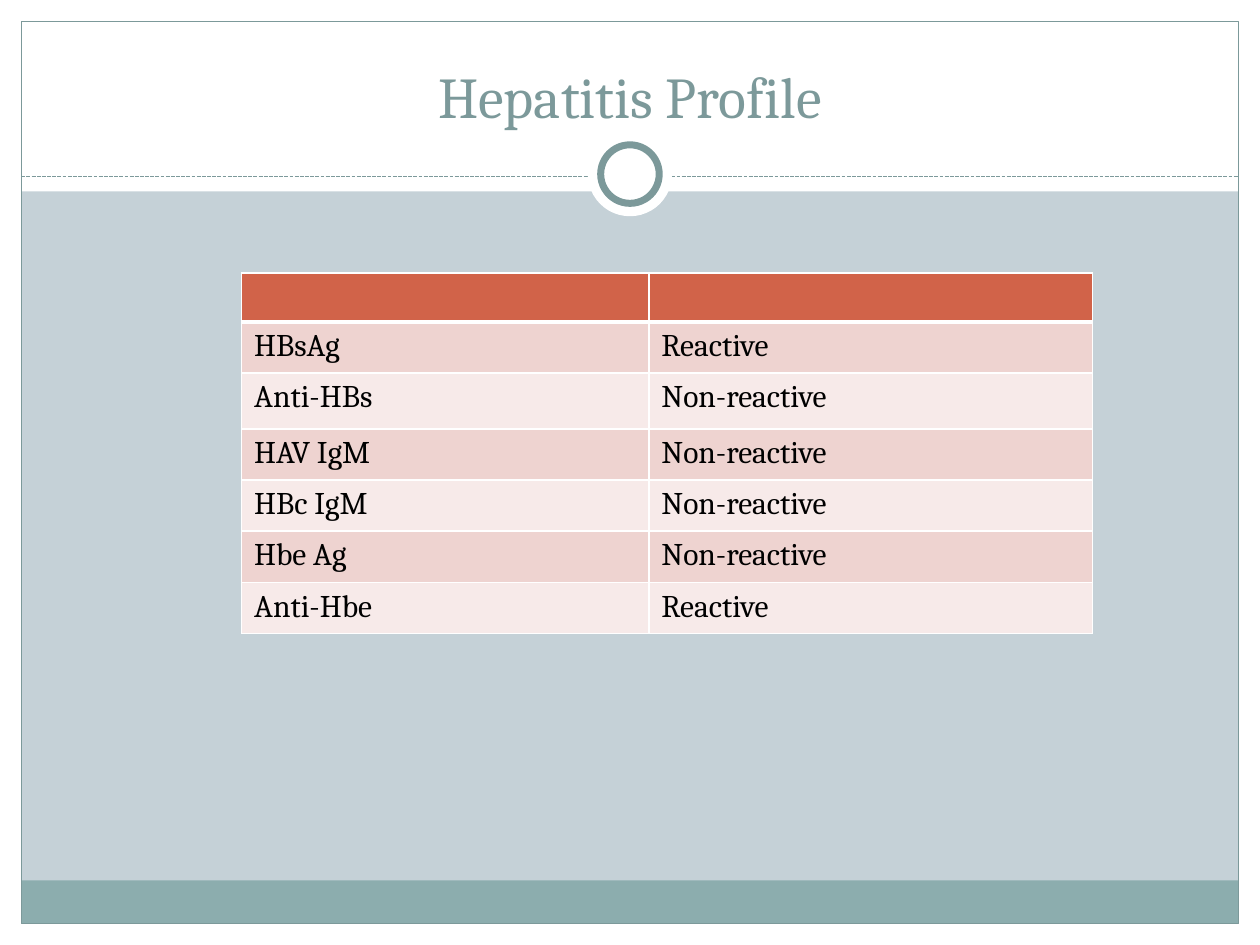
from lxml import etree
from pptx import Presentation
from pptx.dml.color import RGBColor
from pptx.enum.dml import MSO_LINE
from pptx.enum.shapes import MSO_CONNECTOR, MSO_SHAPE
from pptx.enum.text import MSO_ANCHOR, MSO_AUTO_SIZE, PP_ALIGN
from pptx.oxml.ns import qn
from pptx.util import Cm, Pt

RECT, OVAL = MSO_SHAPE.RECTANGLE, MSO_SHAPE.OVAL
LINE, DASH = MSO_CONNECTOR.STRAIGHT, MSO_LINE.SQUARE_DOT
LEFT, MID = PP_ALIGN.LEFT, PP_ALIGN.CENTER
TOP, LOW = MSO_ANCHOR.TOP, MSO_ANCHOR.BOTTOM
FIT = MSO_AUTO_SIZE.NONE

WHITE = RGBColor(0xFF, 0xFF, 0xFF)
BLACK = RGBColor(0, 0, 0)
BACK = RGBColor(0xC5, 0xD1, 0xD7)
TEAL = RGBColor(0x8C, 0xAD, 0xAE)
SLATE = RGBColor(0x7C, 0x99, 0x9A)
RUST = RGBColor(0xD1, 0x63, 0x49)
ROSE = RGBColor(0xEE, 0xD3, 0xD0)
PALE = RGBColor(0xF7, 0xEA, 0xE9)
FONT = "Cambria"


def write(frame, text, size=18, color=BLACK, align=LEFT, anchor=TOP):
    frame.word_wrap = True
    frame.vertical_anchor = anchor
    para = frame.paragraphs[0]
    para.alignment = align
    run = para.add_run()
    run.text = text
    run.font.name = FONT
    run.font.size = Pt(size)
    run.font.bold = False
    run.font.color.rgb = color


def draw(kind, x, y, w, h, fill=None, width=0):
    item = shapes.add_shape(kind, Cm(x), Cm(y), Cm(w), Cm(h))
    item.shadow.inherit = False
    if fill:
        item.fill.solid()
        item.fill.fore_color.rgb = fill
    else:
        item.fill.background()
    if width:
        item.line.color.rgb = SLATE
        item.line.width = Pt(width)
    else:
        item.line.fill.background()


deck = Presentation()
deck.slide_width, deck.slide_height = Cm(25.4), Cm(19.05)
slide = deck.slides.add_slide(deck.slide_layouts[5])
slide.background.fill.solid()
slide.background.fill.fore_color.rgb = BACK
shapes = slide.shapes

EDGE = 0.43
WIDE, HIGH = 25.4 - 2 * EDGE, 19.05 - 2 * EDGE
draw(RECT, 0, 19.05 - EDGE, 25.4, EDGE, WHITE)
draw(RECT, 0, 0, 25.4, 3.86, WHITE)
for x in (0, 25.4 - EDGE):
    draw(RECT, x, 0, EDGE, 19.05, WHITE)
draw(RECT, EDGE, 17.75, WIDE, 0.87, TEAL)
draw(RECT, EDGE, EDGE, WIDE, HIGH, width=0.75)

rule = shapes.add_connector(LINE, Cm(EDGE), Cm(3.56), Cm(25.4 - EDGE), Cm(3.56))
rule.line.color.rgb = SLATE
rule.line.width = Pt(0.75)
rule.line.dash_style = DASH
etree.SubElement(rule._element.spPr, qn("a:effectLst"))

for size, width in ((1.7, 0), (1.18, 4)):
    draw(OVAL, 12.7 - size / 2, 3.51 - size / 2, size, size, WHITE, width)

title = shapes.title
title.left, title.top, title.width, title.height = Cm(0.85), Cm(0.64), Cm(23.7), Cm(2.1)
title.text_frame.auto_size = FIT
write(title.text_frame, "Hepatitis Profile", size=33, color=SLATE, align=MID, anchor=LOW)
title._element.getparent().append(title._element)

ROWS = [
    ("", ""),
    ("HBsAg", "Reactive"),
    ("Anti-HBs", "Non-reactive"),
    ("HAV IgM", "Non-reactive"),
    ("HBc IgM", "Non-reactive"),
    ("Hbe Ag", "Non-reactive"),
    ("Anti-Hbe", "Reactive"),
]
TALL = [0.99, 1.03, 1.13] + [1.03] * 4
grid = shapes.add_table(
    len(ROWS), 2, Cm(4.87), Cm(5.5), Cm(17.15), Cm(sum(TALL))
).table
grid.horz_banding = False
for col, width in zip(grid.columns, (8.21, 8.94)):
    col.width = Cm(width)

for r, (row, tall) in enumerate(zip(ROWS, TALL)):
    grid.rows[r].height = Cm(tall)
    for c, text in enumerate(row):
        cell = grid.cell(r, c)
        if text:
            write(cell.text_frame, text)
        else:
            cell.margin_top = cell.margin_bottom = 0
        props = cell._tc.get_or_add_tcPr()
        for side in "LRTB":
            thick = (r, side) in ((0, "B"), (1, "T"))
            edge = etree.SubElement(props, qn("a:ln" + side), w=str(Pt(3 if thick else 1)))
            paint = etree.SubElement(edge, qn("a:solidFill"))
            etree.SubElement(paint, qn("a:srgbClr"), val=str(WHITE))
        cell.fill.solid()
        cell.fill.fore_color.rgb = RUST if r == 0 else ROSE if r % 2 else PALE

deck.save("out.pptx")
